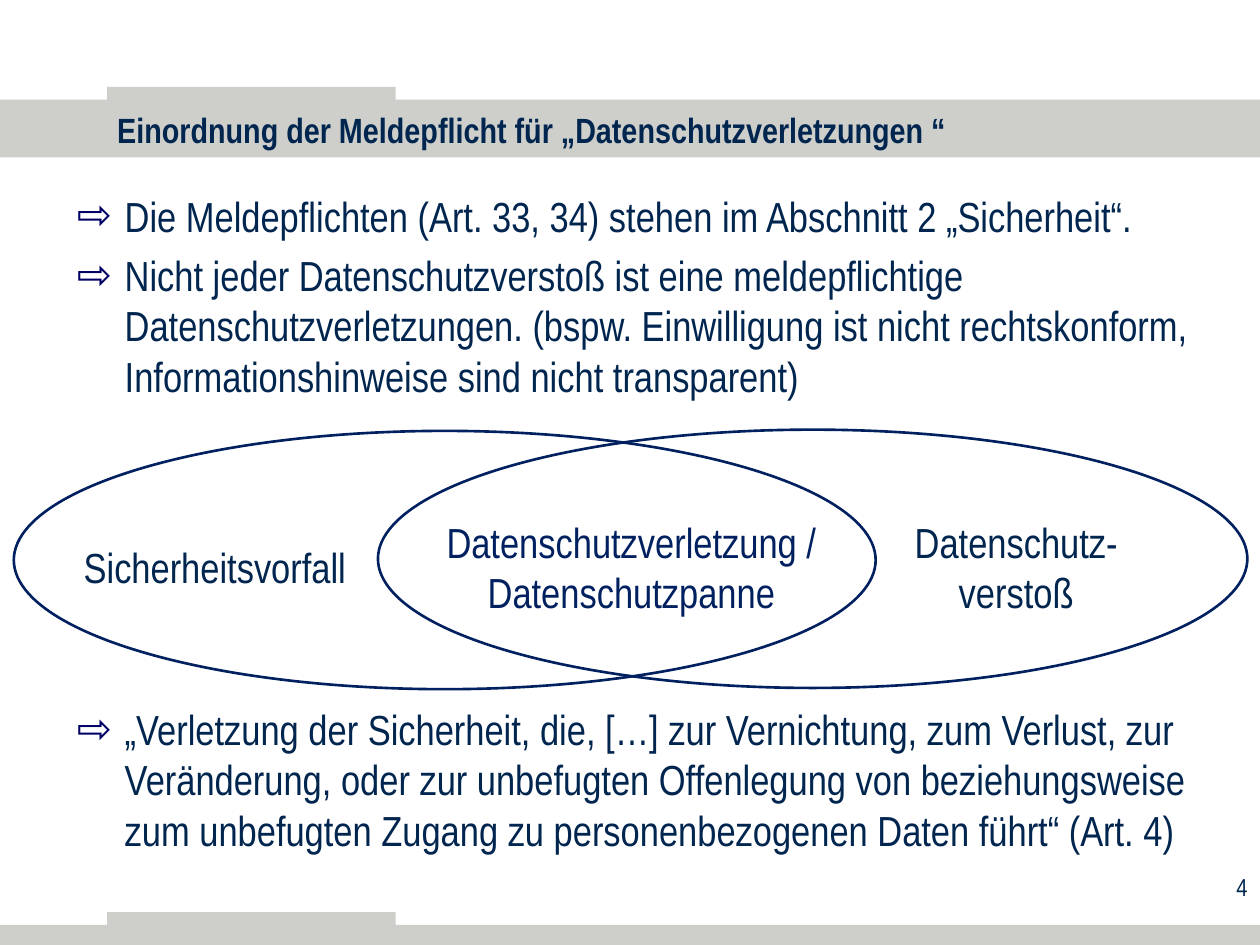
import pptx
import pptx.util
import pptx.dml.color
import pptx.enum.shapes
import pptx.enum.text
import pptx.oxml.ns
from lxml import etree

Inches, Pt = pptx.util.Inches, pptx.util.Pt
RGBColor = pptx.dml.color.RGBColor
ALIGN = pptx.enum.text.PP_ALIGN
ANCHOR = pptx.enum.text.MSO_ANCHOR
SHAPE = pptx.enum.shapes.MSO_SHAPE

NAVY = RGBColor(0x00, 0x25, 0x4F)
OUTLINE_BLUE = RGBColor(0x00, 0x20, 0x60)
BULLET_BLUE = RGBColor(0x00, 0x00, 0x66)
BAND_GREY = RGBColor(0xCE, 0xCF, 0xCB)
FONT = "Arial Narrow"

# Content: lengths in inches, spacing in points
TITLE = "Einordnung der Meldepflicht für „Datenschutzverletzungen “"
STATEMENTS = [  # text, space before (the last one clears the diagram)
    ("Die Meldepflichten (Art. 33, 34) stehen im Abschnitt 2 „Sicherheit“.", 0),
    ("Nicht jeder Datenschutzverstoß ist eine meldepflichtige "
     "Datenschutzverletzungen. (bspw. Einwilligung ist nicht rechtskonform, "
     "Informationshinweise sind nicht transparent)", 5),
    ("„Verletzung der Sicherheit, die, […] zur Vernichtung, zum Verlust, zur "
     "Veränderung, oder zur unbefugten Offenlegung von beziehungsweise zum "
     "unbefugten Zugang zu personenbezogenen Daten führt“ (Art. 4)", 173),
]
PAGE_NUMBER = "4"
BANDS = [(0, 0.79, 10, 0.46), (0, 7.34, 10, 0.17),
         (0.85, 0.69, 2.29, 0.13), (0.85, 7.24, 2.29, 0.13)]
SETS = [(0.11, 3.42, 6.84, 2.05), (3, 3.41, 6.9, 2.05)]
SET_LABELS = [
    ("Sicherheitsvorfall", (0.55, 4.25, 2.31, 0.5), NAVY),
    ("Datenschutz-\vverstoß", (7.15, 4.05, 1.83, 0.91), NAVY),
    ("Datenschutzverletzung /\nDatenschutzpanne", (3.42, 4.05, 3.18, 0.91), OUTLINE_BLUE),
]


def place(part, box):
    part.left, part.top, part.width, part.height = map(Inches, box)


def write(paragraph, text, size=24, color=NAVY, bold=False, align=ALIGN.LEFT, before=0):
    paragraph.text = text
    paragraph.alignment = align
    paragraph.space_before = Pt(before)
    paragraph.font.name = FONT
    paragraph.font.size = Pt(size)
    paragraph.font.bold = bold
    paragraph.font.color.rgb = color


def add_label(slide, text, box, wrap=False, **style):
    frame = slide.shapes.add_textbox(*map(Inches, box)).text_frame
    frame.word_wrap = wrap
    for i, line in enumerate(text.split("\n")):
        write(frame.add_paragraph() if i else frame.paragraphs[0], line, **style)


def add_arrow_bullet(paragraph):
    qn = pptx.oxml.ns.qn
    properties = paragraph._p.get_or_add_pPr()
    properties.set("marL", str(Inches(0.38)))
    properties.set("indent", str(-Inches(0.38)))
    color = etree.SubElement(properties, qn("a:buClr"))
    etree.SubElement(color, qn("a:srgbClr"), val=str(BULLET_BLUE))
    etree.SubElement(properties, qn("a:buChar"), char="⇨")


def add_plain_shape(slide, kind, box):
    shape = slide.shapes.add_shape(kind, *map(Inches, box))
    shape.shadow.inherit = False
    return shape


def main():
    deck = pptx.Presentation()
    deck.slide_width, deck.slide_height = Inches(10), Inches(7.5)
    slide = deck.slides.add_slide(deck.slide_layouts[1])
    title, body = slide.placeholders

    # Grey bands, moved behind the placeholders
    for position, box in enumerate(BANDS):
        band = add_plain_shape(slide, SHAPE.RECTANGLE, box)
        band.fill.solid()
        band.fill.fore_color.rgb = BAND_GREY
        band.line.fill.background()
        title._element.getparent().insert(2 + position, band._element)

    # Title and statements
    place(title, (0.83, 0.82, 8.7, 0.42))
    place(body, (0.51, 1.46, 9.32, 5.69))
    for part, anchor in ((title, ANCHOR.MIDDLE), (body, ANCHOR.TOP)):
        part.text_frame.auto_size = pptx.enum.text.MSO_AUTO_SIZE.NONE
        part.text_frame.vertical_anchor = anchor
    write(title.text_frame.paragraphs[0], TITLE, size=20, bold=True)
    for i, (statement, before) in enumerate(STATEMENTS):
        frame = body.text_frame
        paragraph = frame.add_paragraph() if i else frame.paragraphs[0]
        add_arrow_bullet(paragraph)
        write(paragraph, statement, before=before)

    # Page number
    add_label(slide, PAGE_NUMBER, (7.78, 6.87, 2.22, 0.43), wrap=True,
              size=14, align=ALIGN.RIGHT)

    # Overlapping sets with their labels
    for text, box, color in SET_LABELS:
        add_label(slide, text, box, color=color, align=ALIGN.CENTER)
    for box in SETS:
        ellipse = add_plain_shape(slide, SHAPE.OVAL, box)
        ellipse.fill.background()
        ellipse.line.color.rgb = OUTLINE_BLUE
        ellipse.line.width = Pt(1.5)

    deck.save("out.pptx")


if __name__ == "__main__":
    main()
